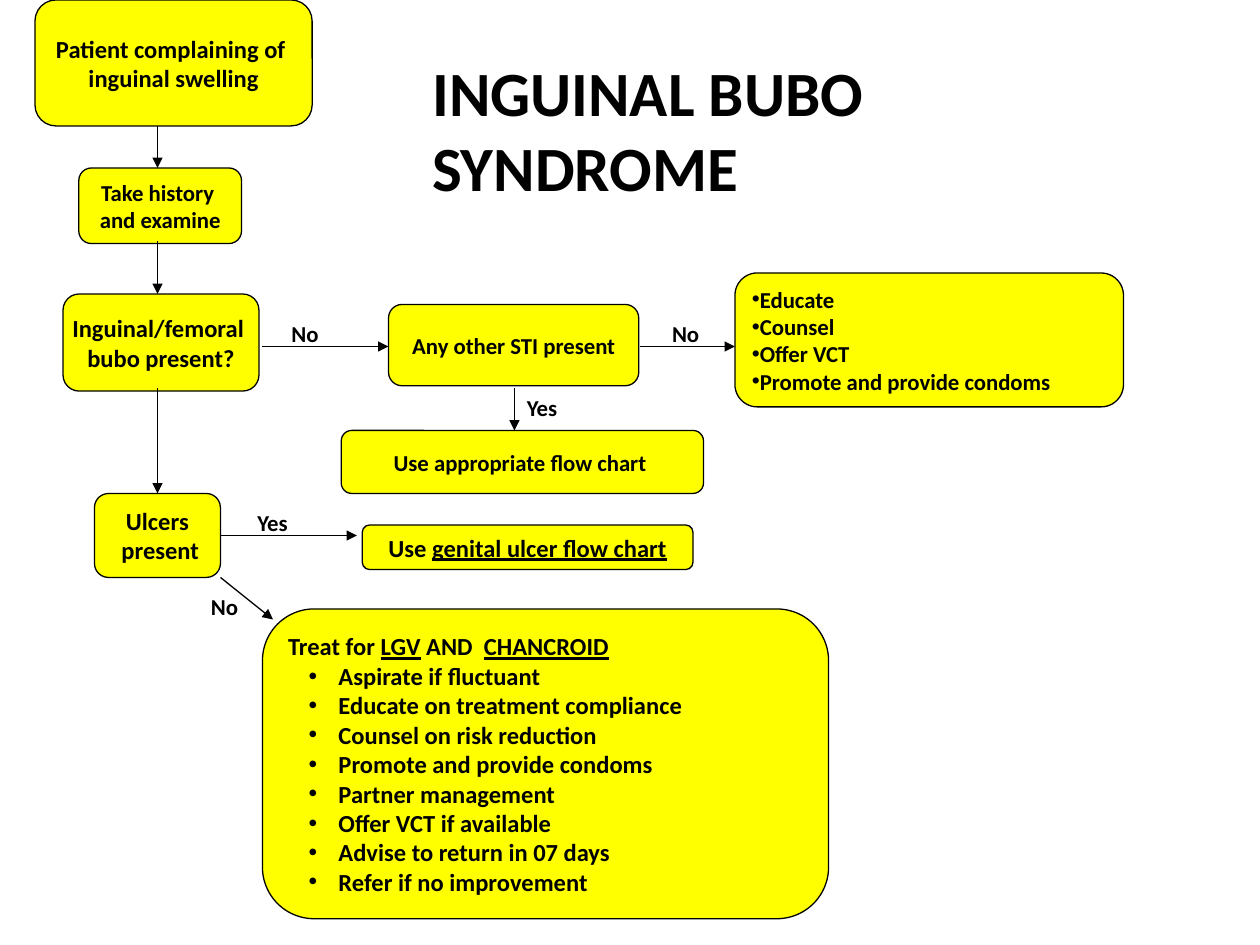
import dataclasses

import lxml.etree
import pptx
import pptx.dml.color
import pptx.enum.shapes
import pptx.enum.text
import pptx.oxml.ns
import pptx.util

Pt = pptx.util.Pt
qn = pptx.oxml.ns.qn
ALIGN = pptx.enum.text.PP_ALIGN
ANCHOR = pptx.enum.text.MSO_ANCHOR


@dataclasses.dataclass(frozen=True)
class Theme:
    """Colours, font and sizes of the flow chart."""

    font: str = "Calibri"
    ink: pptx.dml.color.RGBColor = pptx.dml.color.RGBColor(0, 0, 0)
    box: pptx.dml.color.RGBColor = pptx.dml.color.RGBColor(255, 255, 0)
    title: int = 36
    large: int = 14
    small: int = 13
    line: float = 0.75


THEME = Theme()

STEPS = [
    ((20, 0, 158.4, 72), "Patient complaining of \ninguinal swelling", THEME.large),
    ((45, 96, 93, 43.2), "Take history \nand examine", THEME.small),
    ((36, 168, 112, 55.5), "Inguinal/femoral \nbubo present?", THEME.large),
    ((54, 282, 72, 48), "Ulcers\n present", THEME.large),
    ((222, 174, 143, 46.5), "Any other STI present", THEME.small),
    ((195, 246, 207, 36), "Use appropriate flow chart ", THEME.small),
]

ARROWS = [
    ((90, 72), (90, 96)),
    ((90, 138), (90, 168)),
    ((90, 222), (90, 282)),
    ((126, 330), (156, 354)),
    ((150, 198), (222, 198)),
    ((294, 222), (294, 246)),
    ((366, 198), (420, 198)),
    ((126, 306), (204, 306)),
]

LABELS = [
    ((160.5, 180, 29, 21.6), "No"),
    ((378, 180, 29, 21.6), "No"),
    ((295, 222, 35, 21.6), "Yes"),
    ((141, 288, 35, 21.6), "Yes"),
    ((114.5, 336, 29, 21.6), "No"),
]

ADVICE = ["Educate", "Counsel", "Offer VCT", "Promote and provide condoms"]

TREATMENT = [
    "Aspirate if fluctuant",
    "Educate on treatment compliance",
    "Counsel on risk reduction",
    "Promote and provide condoms",
    "Partner management",
    "Offer VCT if available",
    "Advise to return in 07 days",
    "Refer if no improvement",
]


def format_text(text_frame, size, align, anchor, wrap):
    """Apply margins, alignment and the bold font to every run."""
    text_frame.word_wrap = wrap
    text_frame.vertical_anchor = anchor
    text_frame.margin_left = text_frame.margin_right = Pt(6)
    text_frame.margin_top = text_frame.margin_bottom = Pt(3)
    for paragraph in text_frame.paragraphs:
        paragraph.alignment = align
        for run in paragraph.runs:
            run.font.name = THEME.font
            run.font.size = Pt(size)
            run.font.bold = True
            run.font.color.rgb = THEME.ink


def add_runs(paragraph, pieces):
    """Add (text, underlined) pieces to a paragraph."""
    for text, underlined in pieces:
        run = paragraph.add_run()
        run.text = text
        run.font.underline = underlined


def add_bullet(paragraph, margin=0, indent=0):
    """Give a paragraph a round bullet and its indents."""
    properties = paragraph._p.get_or_add_pPr()
    properties.set("marL", str(Pt(margin)))
    properties.set("indent", str(Pt(indent)))
    font = lxml.etree.SubElement(properties, qn("a:buFont"))
    font.set("typeface", "Arial")
    bullet = lxml.etree.SubElement(properties, qn("a:buChar"))
    bullet.set("char", "•")


def add_box(slide, box):
    """Draw an empty yellow rounded box."""
    kind = pptx.enum.shapes.MSO_SHAPE.FLOWCHART_ALTERNATE_PROCESS
    shape = slide.shapes.add_shape(kind, *map(Pt, box))
    shape.shadow.inherit = False
    shape.fill.solid()
    shape.fill.fore_color.rgb = THEME.box
    shape.line.color.rgb = THEME.ink
    shape.line.width = Pt(THEME.line)
    return shape


def add_step(slide, box, text, size):
    """Draw a step with centred text."""
    text_frame = add_box(slide, box).text_frame
    text_frame.text = text
    format_text(text_frame, size, ALIGN.CENTER, ANCHOR.MIDDLE, False)


def add_ulcer_reference(slide, box):
    """Draw the step that refers to the genital ulcer chart."""
    text_frame = add_box(slide, box).text_frame
    add_runs(text_frame.paragraphs[0], [("Use ", False), ("genital ulcer flow chart", True)])
    format_text(text_frame, THEME.large, ALIGN.CENTER, ANCHOR.MIDDLE, False)


def add_advice(slide, box):
    """Draw the bulleted advice for patients without an infection."""
    text_frame = add_box(slide, box).text_frame
    text_frame.text = "\n".join(ADVICE)
    format_text(text_frame, THEME.small, ALIGN.LEFT, ANCHOR.MIDDLE, True)
    for paragraph in text_frame.paragraphs:
        add_bullet(paragraph)


def add_treatment(slide, box):
    """Draw the treatment box with its heading and bulleted actions."""
    text_frame = add_box(slide, box).text_frame
    heading = [("Treat for ", False), ("LGV", True), (" AND  ", False), ("CHANCROID", True)]
    add_runs(text_frame.paragraphs[0], heading)
    for action in TREATMENT:
        paragraph = text_frame.add_paragraph()
        paragraph.text = action
        paragraph.level = 1
        add_bullet(paragraph, 28.8, -17)
    format_text(text_frame, THEME.large, ALIGN.LEFT, ANCHOR.MIDDLE, True)


def add_caption(slide, box, text, size, wrap=False):
    """Place plain text such as the title or an arrow label."""
    text_frame = slide.shapes.add_textbox(*map(Pt, box)).text_frame
    text_frame.text = text
    format_text(text_frame, size, ALIGN.LEFT, ANCHOR.TOP, wrap)


def add_arrow(slide, start, end):
    """Draw an arrow from start to end."""
    kind = pptx.enum.shapes.MSO_CONNECTOR.STRAIGHT
    connector = slide.shapes.add_connector(kind, *map(Pt, start + end))
    connector.line.color.rgb = THEME.ink
    connector.line.width = Pt(THEME.line)
    head = lxml.etree.SubElement(connector.line._get_or_add_ln(), qn("a:tailEnd"))
    head.set("type", "triangle")
    lxml.etree.SubElement(connector._element.spPr, qn("a:effectLst"))


def main():
    """Build the flow chart slide and save it."""
    presentation = pptx.Presentation()
    presentation.slide_width, presentation.slide_height = Pt(720), Pt(540)
    slide = presentation.slides.add_slide(presentation.slide_layouts[6])
    add_caption(slide, (241, 27.5, 284, 93), "INGUINAL BUBO SYNDROME", THEME.title, True)
    for box, text, size in STEPS:
        add_step(slide, box, text, size)
    add_treatment(slide, (150, 348, 323.5, 177))
    add_advice(slide, (420, 156, 222, 76.5))
    add_ulcer_reference(slide, (207, 300, 189, 25.5))
    for start, end in ARROWS:
        add_arrow(slide, start, end)
    for box, text in LABELS:
        add_caption(slide, box, text, THEME.small)
    presentation.save("out.pptx")


if __name__ == "__main__":
    main()
